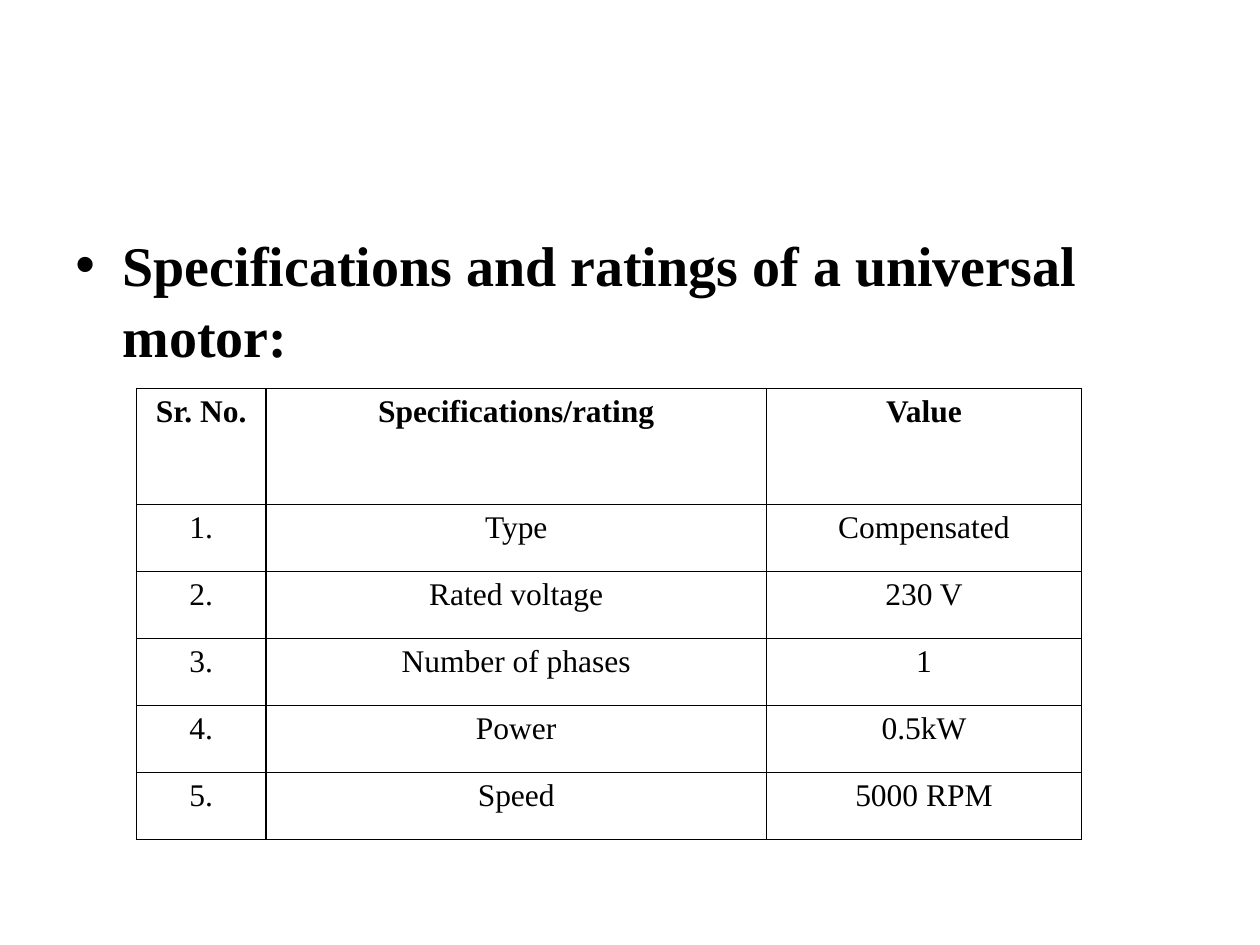
from lxml import etree
from pptx import Presentation
from pptx.dml.color import RGBColor
from pptx.enum import text
from pptx.oxml import ns
from pptx.util import Pt

BLACK = RGBColor(0, 0, 0)
FONT = "Times New Roman"
COLUMN_WIDTHS = [74, 286, 180]
HEADER_HEIGHT, ROW_HEIGHT = 66.2, 38.3
ROWS = [
    ("Sr. No.", "Specifications/rating", "Value"),
    ("1.", "Type", "Compensated"),
    ("2.", "Rated voltage", "230 V"),
    ("3.", "Number of phases", "1"),
    ("4.", "Power", "0.5kW"),
    ("5.", "Speed", "5000 RPM"),
]


def write(paragraph, words, size, bold):
    run = paragraph.add_run()
    run.text = words
    run.font.color.rgb = BLACK
    for name, value in {"name": FONT, "size": Pt(size), "bold": bold}.items():
        setattr(run.font, name, value)


def add_borders(cell):
    properties = cell._tc.get_or_add_tcPr()
    for index, side in enumerate(("lnL", "lnR", "lnT", "lnB")):
        line = etree.Element(ns.qn(f"a:{side}"), w=str(Pt(1)))
        fill = etree.SubElement(line, ns.qn("a:solidFill"))
        etree.SubElement(fill, ns.qn("a:srgbClr"), val=str(BLACK))
        properties.insert(index, line)


presentation = Presentation()
presentation.slide_width, presentation.slide_height = Pt(720), Pt(540)
slide = presentation.slides.add_slide(presentation.slide_layouts[6])

# Heading
heading = slide.shapes.add_textbox(Pt(36), Pt(126), Pt(648), Pt(356.4))
heading.text_frame.word_wrap = True
paragraph = heading.text_frame.paragraphs[0]
paragraph.space_before = Pt(6.4)
paragraph.line_spacing = 1.06
write(paragraph, "Specifications and ratings of a universal motor:", 32, True)
properties = paragraph._p.get_or_add_pPr()
properties.set("marL", str(Pt(27)))
properties.set("indent", str(Pt(-27)))
etree.SubElement(properties, ns.qn("a:buFont"), typeface="Arial")
etree.SubElement(properties, ns.qn("a:buChar"), char="•")

# Ratings table
table_height = HEADER_HEIGHT + ROW_HEIGHT * (len(ROWS) - 1)
table = slide.shapes.add_table(
    len(ROWS), len(COLUMN_WIDTHS), Pt(78), Pt(222),
    Pt(sum(COLUMN_WIDTHS)), Pt(table_height),
).table
table.first_row = table.horz_banding = False
for column, width in zip(table.columns, COLUMN_WIDTHS):
    column.width = Pt(width)
for row_index, values in enumerate(ROWS):
    is_header = row_index == 0
    table.rows[row_index].height = Pt(HEADER_HEIGHT if is_header else ROW_HEIGHT)
    for cell, value in zip(table.rows[row_index].cells, values):
        cell.fill.background()
        add_borders(cell)
        paragraph = cell.text_frame.paragraphs[0]
        paragraph.alignment = text.PP_ALIGN.CENTER
        write(paragraph, value, 18, is_header)

presentation.save("out.pptx")
